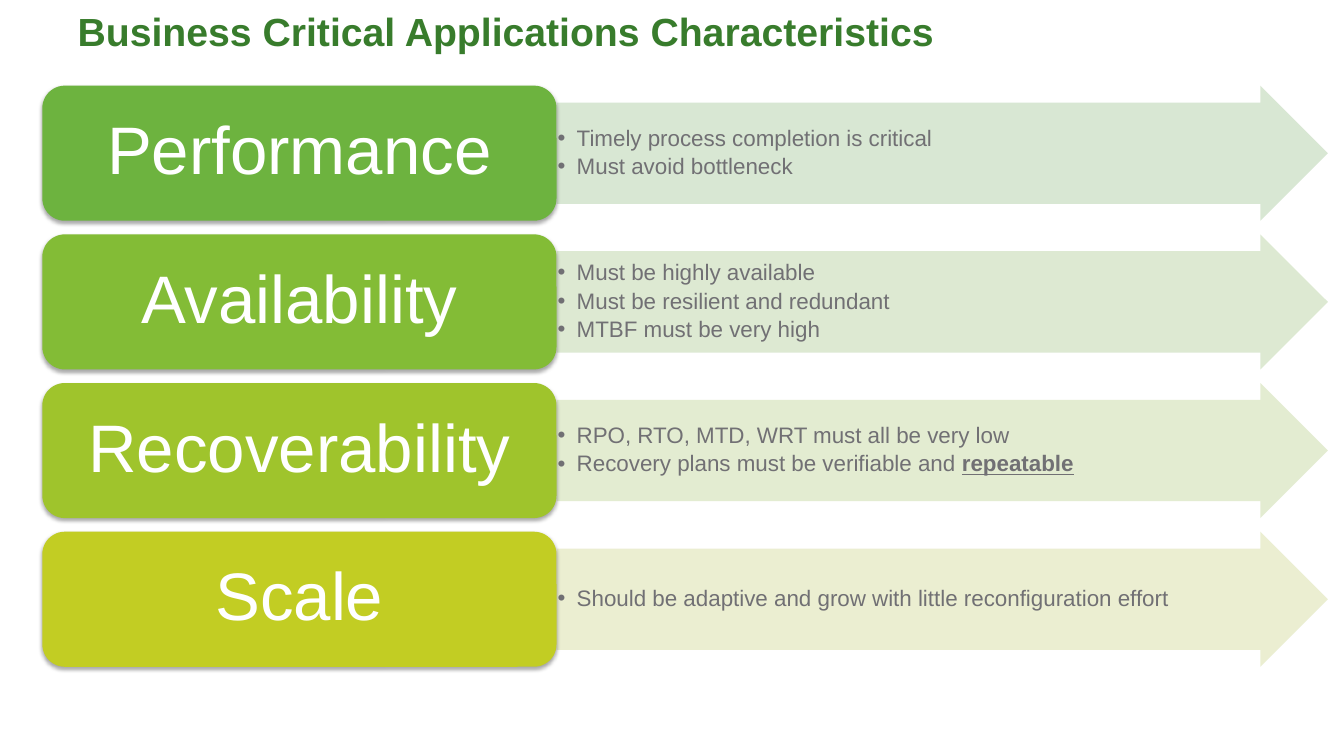
from dataclasses import dataclass

from lxml import etree
from pptx import Presentation
from pptx.dml.color import RGBColor
from pptx.enum.shapes import MSO_SHAPE
from pptx.enum.text import MSO_ANCHOR, MSO_AUTO_SIZE, PP_ALIGN
from pptx.oxml.ns import qn
from pptx.util import Inches, Pt

ARROW = MSO_SHAPE.RIGHT_ARROW
ROUND = MSO_SHAPE.ROUNDED_RECTANGLE
TOP = MSO_ANCHOR.TOP
MIDDLE = MSO_ANCHOR.MIDDLE
LEFT = PP_ALIGN.LEFT
CENTER = PP_ALIGN.CENTER
FIXED = MSO_AUTO_SIZE.NONE


@dataclass(frozen=True)
class Theme:
    font: str = "Arial"
    title: str = "387C2C"
    label: str = "FFFFFF"
    point: str = "717074"
    shade: str = "000000"
    title_size: int = 28
    label_size: int = 48
    point_size: int = 16


THEME = Theme()

ROWS = [
    ("Performance", "6DB33F", "D4E5CF",
     [("Timely process completion is critical", ""),
      ("Must avoid bottleneck", "")]),
    ("Availability", "83BC36", "DAE7CE",
     [("Must be highly available", ""),
      ("Must be resilient and redundant", ""),
      ("MTBF must be very high", "")]),
    ("Recoverability", "9FC42C", "E1EACD",
     [("RPO, RTO, MTD, WRT must all be very low", ""),
      ("Recovery plans must be verifiable and ", "repeatable")]),
    ("Scale", "C2CD23", "E9EDCD",
     [("Should be adaptive and grow with little reconfiguration effort", "")]),
]

START = 0.85
PITCH = 1.475
HEIGHT = 1.34


def style(para, size, color):
    para.line_spacing = 0.9
    for run in para.runs:
        run.font.name = THEME.font
        run.font.size = Pt(size)
        run.font.color.rgb = RGBColor.from_string(color)


def set_frame(frame, anchor, left, top, right, bottom):
    frame.word_wrap = True
    frame.auto_size = FIXED
    frame.vertical_anchor = anchor
    frame.margin_left = Inches(left)
    frame.margin_top = Inches(top)
    frame.margin_right = Inches(right)
    frame.margin_bottom = Inches(bottom)


def add_block(slide, kind, left, top, width, color):
    block = slide.shapes.add_shape(
        kind, Inches(left), Inches(top), Inches(width), Inches(HEIGHT))
    block.shadow.inherit = False
    block.fill.solid()
    block.fill.fore_color.rgb = RGBColor.from_string(color)
    block.line.fill.background()
    return block


def add_alpha(color, share):
    etree.SubElement(color, qn("a:alpha"), val=str(share * 1000))


def add_shade(shape):
    effects = shape._element.spPr.find(qn("a:effectLst"))
    shade = etree.SubElement(
        effects, qn("a:outerShdw"), blurRad=str(Pt(3.1)), dist=str(Pt(1.8)),
        dir="5400000", rotWithShape="0")
    color = etree.SubElement(shade, qn("a:srgbClr"), val=THEME.shade)
    add_alpha(color, 35)


def add_bullet(para):
    props = para._p.get_or_add_pPr()
    props.set("marL", str(Inches(0.19)))
    props.set("indent", str(Inches(-0.19)))
    etree.SubElement(props, qn("a:buFont"), typeface=THEME.font)
    etree.SubElement(props, qn("a:buChar"), char="•")


def add_title(slide, text):
    title = slide.shapes.title
    title.left, title.top = Inches(0.67), Inches(0.08)
    title.width, title.height = Inches(11.99), Inches(0.64)
    frame = title.text_frame
    set_frame(frame, TOP, 0.1, 0.05, 0.1, 0.05)
    frame.text = text
    para = frame.paragraphs[0]
    para.alignment = LEFT
    style(para, THEME.title_size, THEME.title)
    para.runs[0].font.bold = True


def add_arrow(slide, top, color, points):
    arrow = add_block(slide, ARROW, 5.52, top, 7.65, color)
    arrow.adjustments[0] = 0.75
    arrow.adjustments[1] = 0.5
    add_alpha(arrow._element.spPr.find(qn("a:solidFill"))[0], 90)
    frame = arrow.text_frame
    set_frame(frame, MIDDLE, 0.01, 0.01, 0.18, 0.01)
    frame.text = "\n".join(text for text, _ in points)
    for para, (_, strong) in zip(frame.paragraphs, points):
        add_bullet(para)
        para.alignment = LEFT
        para.space_after = Pt(3)
        if strong:
            run = para.add_run()
            run.text = strong
            run.font.bold = True
            run.font.underline = True
        style(para, THEME.point_size, THEME.point)


def add_label(slide, top, color, text):
    label = add_block(slide, ROUND, 0.42, top, 5.1, color)
    add_shade(label)
    frame = label.text_frame
    set_frame(frame, MIDDLE, 0.2, 0.1, 0.2, 0.1)
    frame.text = text
    para = frame.paragraphs[0]
    para.alignment = CENTER
    style(para, THEME.label_size, THEME.label)


def main():
    deck = Presentation()
    deck.slide_width = Inches(13.33)
    deck.slide_height = Inches(7.5)
    slide = deck.slides.add_slide(deck.slide_layouts[5])
    add_title(slide, "Business Critical Applications Characteristics")
    for index, (name, dark, light, points) in enumerate(ROWS):
        top = START + index * PITCH
        add_arrow(slide, top, light, points)
        add_label(slide, top, dark, name)
    deck.save("out.pptx")


if __name__ == "__main__":
    main()
